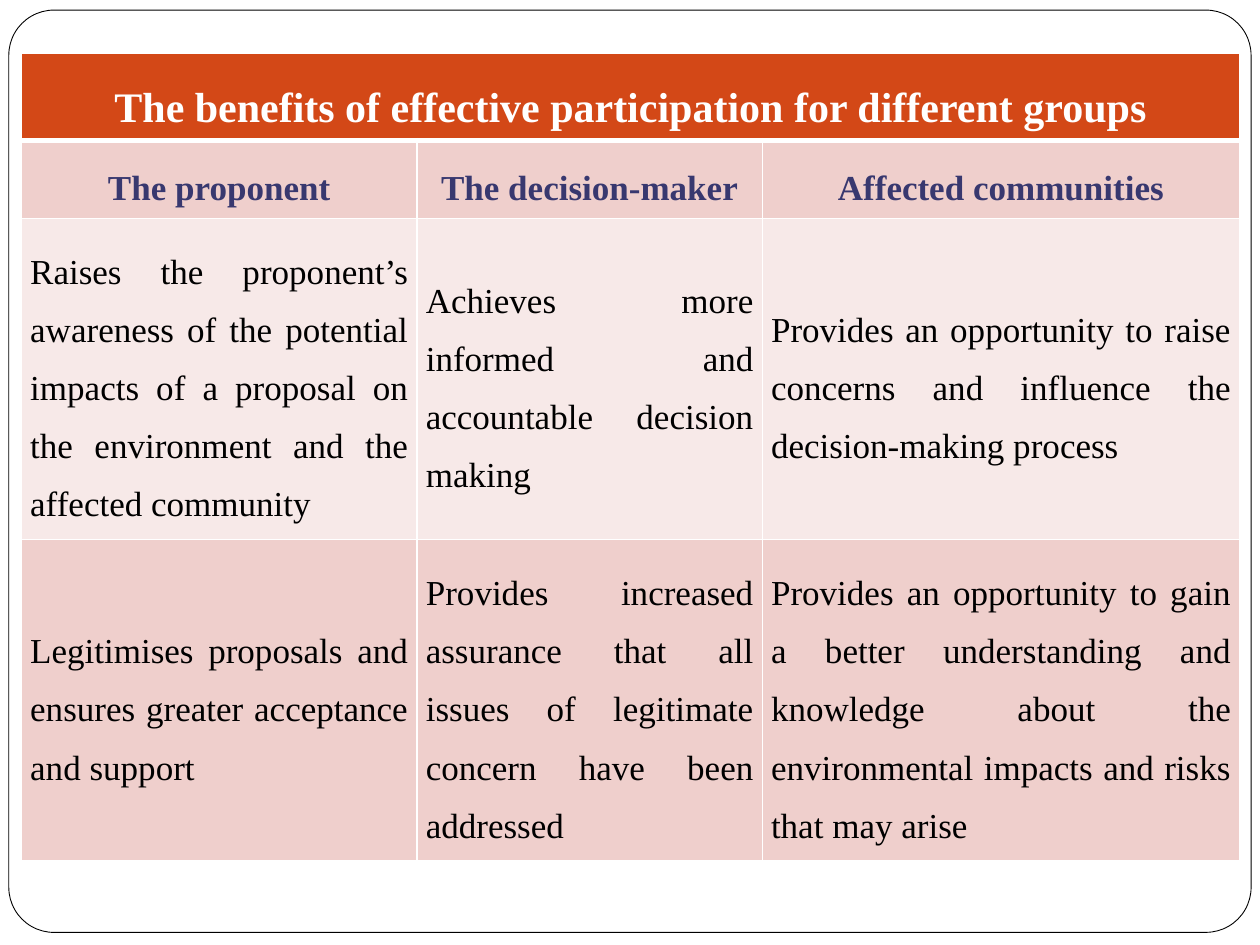
from dataclasses import dataclass

from lxml.etree import SubElement
from pptx import Presentation
from pptx.dml.color import RGBColor
from pptx.enum.shapes import MSO_SHAPE
from pptx.enum.text import MSO_ANCHOR, PP_ALIGN
from pptx.oxml.ns import qn
from pptx.slide import Slide
from pptx.table import Table, _Cell
from pptx.util import Inches, Pt


@dataclass(frozen=True)
class RowStyle:
    height: float
    fill: str
    color: str
    size: int
    bold: bool
    alignment: PP_ALIGN
    top_border: int = 1
    bottom_border: int = 1


@dataclass(frozen=True)
class TableRow:
    texts: tuple[str, ...]
    style: RowStyle


TITLE = RowStyle(0.62, "D34817", "FFFFFF", 24, True, PP_ALIGN.CENTER, bottom_border=3)
HEADING = RowStyle(0.62, "EFCFCC", "38386F", 20, True, PP_ALIGN.CENTER, top_border=3)
LIGHT = RowStyle(2.55, "F7E9E8", "000000", 20, False, PP_ALIGN.JUSTIFY)
DARK = RowStyle(2.55, "EFCFCC", "000000", 20, False, PP_ALIGN.JUSTIFY)

COLUMN_WIDTHS = (3.14, 2.74, 3.79)
ROWS = (
    TableRow(("The benefits of effective participation for different groups",), TITLE),
    TableRow(("The proponent", "The decision-maker", "Affected communities"), HEADING),
    TableRow(
        (
            "Raises the proponent’s awareness of the potential impacts of a proposal "
            "on the environment and the affected community",
            "Achieves more informed and accountable decision making",
            "Provides an opportunity to raise concerns and influence the "
            "decision-making process",
        ),
        LIGHT,
    ),
    TableRow(
        (
            "Legitimises proposals and ensures greater acceptance and support",
            "Provides increased assurance that all issues of legitimate concern "
            "have been addressed",
            "Provides an opportunity to gain a better understanding and knowledge "
            "about the environmental impacts and risks that may arise",
        ),
        DARK,
    ),
)


def rgb(value: str) -> RGBColor:
    return RGBColor.from_string(value)


def add_frame(slide: Slide) -> None:
    frame = slide.shapes.add_shape(
        MSO_SHAPE.ROUNDED_RECTANGLE,
        Inches(0.07), Inches(0.08), Inches(9.86), Inches(7.32),
    )
    frame.adjustments[0] = 0.049
    frame.shadow.inherit = False
    frame.fill.solid()
    frame.fill.fore_color.rgb = rgb("FFFFFF")
    frame.line.color.rgb = rgb("000000")
    frame.line.width = Pt(0.5)


def add_borders(cell: _Cell, style: RowStyle) -> None:
    properties = cell._tc.get_or_add_tcPr()
    widths = {"lnL": 1, "lnR": 1, "lnT": style.top_border, "lnB": style.bottom_border}
    for side, width in widths.items():
        line = SubElement(properties, qn(f"a:{side}"), w=str(Pt(width)))
        fill = SubElement(line, qn("a:solidFill"))
        SubElement(fill, qn("a:srgbClr"), val="FFFFFF")


def style_cell(cell: _Cell, style: RowStyle) -> None:
    add_borders(cell, style)
    cell.fill.solid()
    cell.fill.fore_color.rgb = rgb(style.fill)
    cell.vertical_anchor = MSO_ANCHOR.MIDDLE
    cell.margin_left = cell.margin_right = Inches(0.07)
    cell.margin_top = cell.margin_bottom = Inches(0.07)


def write_cell(cell: _Cell, text: str, style: RowStyle) -> None:
    cell.text = text
    paragraph = cell.text_frame.paragraphs[0]
    paragraph.alignment = style.alignment
    paragraph.line_spacing = 1.5
    paragraph.font.name = "Times New Roman"
    paragraph.font.size = Pt(style.size)
    paragraph.font.bold = style.bold
    paragraph.font.color.rgb = rgb(style.color)


def fill_row(table: Table, index: int, row: TableRow) -> None:
    table.rows[index].height = Inches(row.style.height)
    for cell in table.rows[index].cells:
        style_cell(cell, row.style)
    for column, text in enumerate(row.texts):
        write_cell(table.cell(index, column), text, row.style)


def add_benefits_table(slide: Slide) -> None:
    table = slide.shapes.add_table(
        len(ROWS), len(COLUMN_WIDTHS),
        Inches(0.17), Inches(0.42),
        Inches(sum(COLUMN_WIDTHS)), Inches(sum(row.style.height for row in ROWS)),
    ).table
    for column, width in zip(table.columns, COLUMN_WIDTHS):
        column.width = Inches(width)
    for index, row in enumerate(ROWS):
        fill_row(table, index, row)
    table.cell(0, 0).merge(table.cell(0, len(COLUMN_WIDTHS) - 1))


def main() -> None:
    presentation = Presentation()
    presentation.slide_width = Inches(10)
    presentation.slide_height = Inches(7.5)
    slide = presentation.slides.add_slide(presentation.slide_layouts[6])
    add_frame(slide)
    add_benefits_table(slide)
    presentation.save("out.pptx")


if __name__ == "__main__":
    main()
